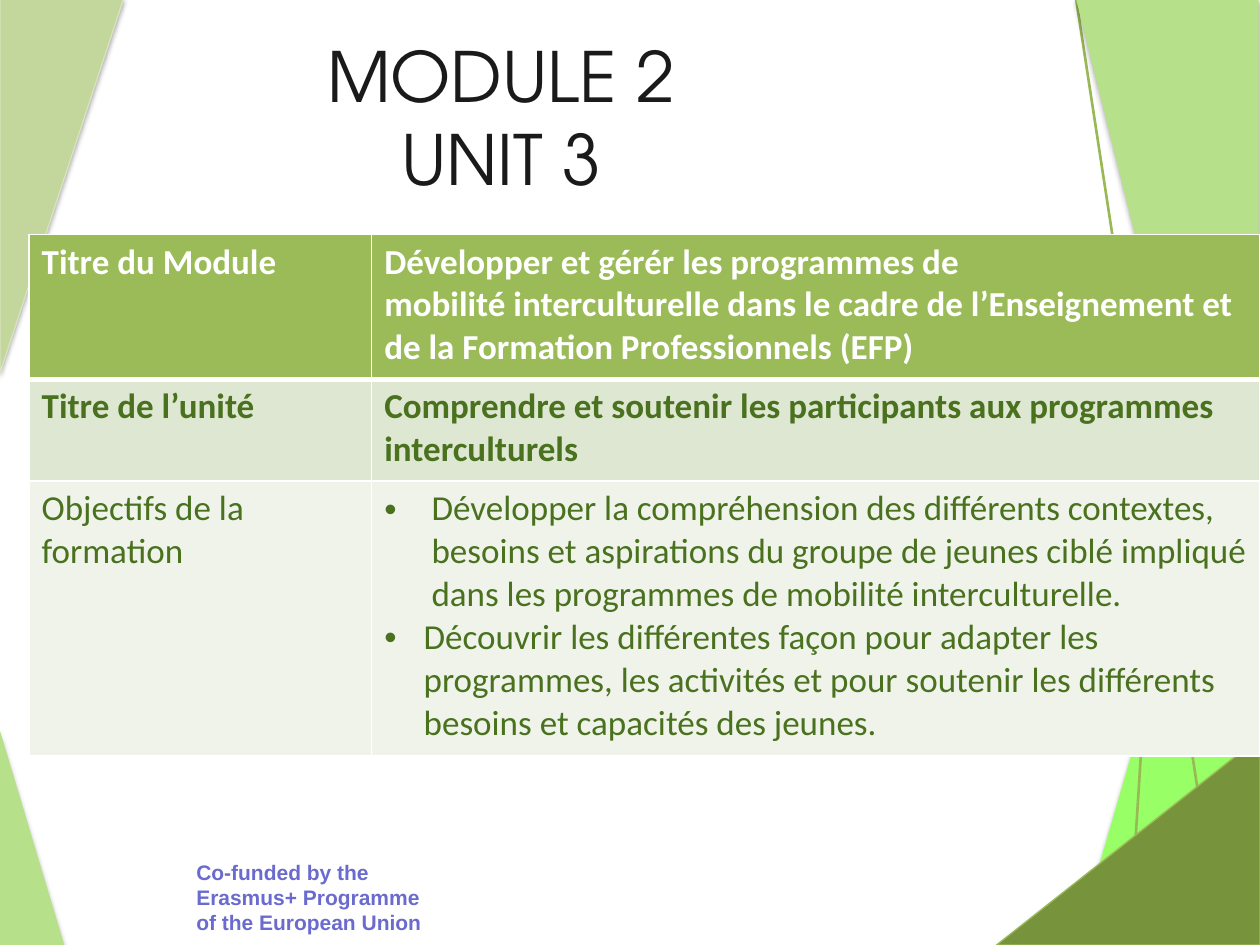
from lxml import etree
from pptx import Presentation
from pptx.dml.color import RGBColor
from pptx.enum.shapes import MSO_CONNECTOR, MSO_SHAPE
from pptx.enum.text import MSO_ANCHOR, PP_ALIGN
from pptx.oxml.ns import qn
from pptx.util import Pt

TRIANGLE = MSO_SHAPE.RIGHT_TRIANGLE
STRAIGHT = MSO_CONNECTOR.STRAIGHT
MIDDLE, TOP = MSO_ANCHOR.MIDDLE, MSO_ANCHOR.TOP
LEFT, CENTER = PP_ALIGN.LEFT, PP_ALIGN.CENTER

COLORS = {
    "white": "FFFFFF", "title": "1A1A1A", "credit": "6B6BCF", "text": "49711E",
    "header": "9BBB59", "unit": "DEE7D1", "goals": "EFF3EA",
    "neon": "99FF66", "light": "B7E08B", "sage": "C3D69B", "olive": "77933C",
    "pale_edge": "D7E4BD", "edge": "98B955", "shadow": "000000",
}

# left, top, width, height, flips, fill, edge, shadow opacity in percent
BACK_TRIANGLES = [
    (614.9, 173.5, 106.6, 366.5, "H", "neon", None, 38),
    (0, 417.6, 36.7, 122.4, "", "light", None, 35),
    (0, -0.7, 70.6, 213.8, "V", "sage", "pale_edge", 35),
]
FRONT_TRIANGLES = [
    (614.9, -0.7, 104.4, 417.6, "HV", "light", None, 35),
    (569.5, 421.2, 150.5, 118.8, "H", "olive", "edge", 35),
]
RAYS = [(645.1, 540, 669.6, 151.2), (694.8, 519.1, 614.9, -0.7)]

TITLE = "MODULE 2\nUNIT 3"
CREDIT = "Co-funded by the Erasmus+ Programme of the European Union"

TABLE_LEFT, TABLE_TOP = 16.6, 133.9
COLUMN_WIDTHS = [195.8, 507.6]
# height, fill, text colour, bold, cells; a cell lists (text, bullet indent)
ROWS = [
    (82.8, "header", "white", True, [
        [("Titre du Module", 0)],
        [("Développer et gérér les programmes de\nmobilité interculturelle dans "
          "le cadre de l’Enseignement et de la Formation Professionnels (EFP)", 0)],
    ]),
    (58.3, "unit", "text", True, [
        [("Titre de l’unité", 0)],
        [("Comprendre et soutenir les participants aux programmes interculturels", 0)],
    ]),
    (157, "goals", "text", False, [
        [("Objectifs de la formation", 0)],
        [("Développer la compréhension des différents contextes, besoins et "
          "aspirations du groupe de jeunes ciblé impliqué dans les programmes "
          "de mobilité interculturelle.", 27),
         ("Découvrir les différentes façon pour adapter les programmes, les "
          "activités et pour soutenir les différents besoins et capacités "
          "des jeunes.", 22.5)],
    ]),
]


def rgb(name):
    return RGBColor.from_string(COLORS[name])


def add_color(parent, name):
    return etree.SubElement(parent, qn("a:srgbClr"), val=COLORS[name])


def write(paragraph, text, font_name, size, color, bold=False, align=LEFT):
    paragraph.text = text
    paragraph.alignment = align
    font = paragraph.font
    font.name, font.size, font.bold = font_name, Pt(size), bold
    font.color.rgb = rgb(color)


def add_triangle(slide, left, top, width, height, flips, fill, edge, opacity):
    triangle = slide.shapes.add_shape(TRIANGLE, Pt(left), Pt(top), Pt(width), Pt(height))
    for axis in flips:
        triangle._element.spPr.xfrm.set("flip" + axis, "1")
    triangle.fill.solid()
    triangle.fill.fore_color.rgb = rgb(fill)
    if edge:
        triangle.line.color.rgb = rgb(edge)
        triangle.line.width = Pt(0.75)
    else:
        triangle.line.fill.background()
    triangle.shadow.inherit = False
    effects = triangle._element.spPr.find(qn("a:effectLst"))
    shadow = etree.SubElement(effects, qn("a:outerShdw"), blurRad=str(Pt(3.1)),
                              dist=str(Pt(1.8)), dir="5400000", rotWithShape="0")
    etree.SubElement(add_color(shadow, "shadow"), qn("a:alpha"), val=str(opacity * 1000))


def add_ray(slide, x1, y1, x2, y2):
    ray = slide.shapes.add_connector(STRAIGHT, Pt(x1), Pt(y1), Pt(x2), Pt(y2))
    ray.line.color.rgb = rgb("edge")
    ray.line.width = Pt(1.5)
    etree.SubElement(ray._element.spPr, qn("a:effectLst"))


def add_text(slide, left, top, width, height, anchor, *style, **options):
    frame = slide.shapes.add_textbox(Pt(left), Pt(top), Pt(width), Pt(height)).text_frame
    frame.word_wrap = True
    frame.vertical_anchor = anchor
    write(frame.paragraphs[0], *style, **options)


def add_bullet(paragraph, indent):
    properties = paragraph._p.get_or_add_pPr()
    properties.set("marL", str(Pt(indent)))
    properties.set("indent", str(-Pt(indent)))
    etree.SubElement(properties, qn("a:buFont"), typeface="Arial")
    etree.SubElement(properties, qn("a:buChar"), char="•")


def add_borders(cell, top, bottom):
    properties = cell._tc.get_or_add_tcPr()
    for side, width in (("L", 1), ("R", 1), ("T", top), ("B", bottom)):
        border = etree.SubElement(properties, qn("a:ln" + side), w=str(Pt(width)))
        add_color(etree.SubElement(border, qn("a:solidFill")), "white")


def add_table(slide):
    table = slide.shapes.add_table(
        len(ROWS), len(COLUMN_WIDTHS), Pt(TABLE_LEFT), Pt(TABLE_TOP),
        Pt(sum(COLUMN_WIDTHS)), Pt(sum(row[0] for row in ROWS))).table
    for column, width in zip(table.columns, COLUMN_WIDTHS):
        column.width = Pt(width)
    for r, (height, fill, color, bold, contents) in enumerate(ROWS):
        table.rows[r].height = Pt(height)
        for c, entries in enumerate(contents):
            cell = table.cell(r, c)
            add_borders(cell, top=3 if r == 1 else 1, bottom=3 if r == 0 else 1)
            cell.fill.solid()
            cell.fill.fore_color.rgb = rgb(fill)
            frame = cell.text_frame
            for i, (text, indent) in enumerate(entries):
                paragraph = frame.add_paragraph() if i else frame.paragraphs[0]
                if indent:
                    add_bullet(paragraph, indent)
                write(paragraph, text, "Calibri", 20, color, bold)


def main():
    deck = Presentation()
    deck.slide_width, deck.slide_height = Pt(720), Pt(540)
    slide = deck.slides.add_slide(deck.slide_layouts[6])
    for triangle in BACK_TRIANGLES:
        add_triangle(slide, *triangle)
    for ray in RAYS:
        add_ray(slide, *ray)
    for triangle in FRONT_TRIANGLES:
        add_triangle(slide, *triangle)
    add_text(slide, 105.1, 487.4, 144, 51.1, TOP, CREDIT, "Arial", 12, "credit", bold=True)
    add_text(slide, 53.3, 21.6, 465.8, 90, MIDDLE, TITLE, "TeX Gyre Adventor", 39.6,
             "title", align=CENTER)
    add_table(slide)
    deck.save("out.pptx")


if __name__ == "__main__":
    main()
